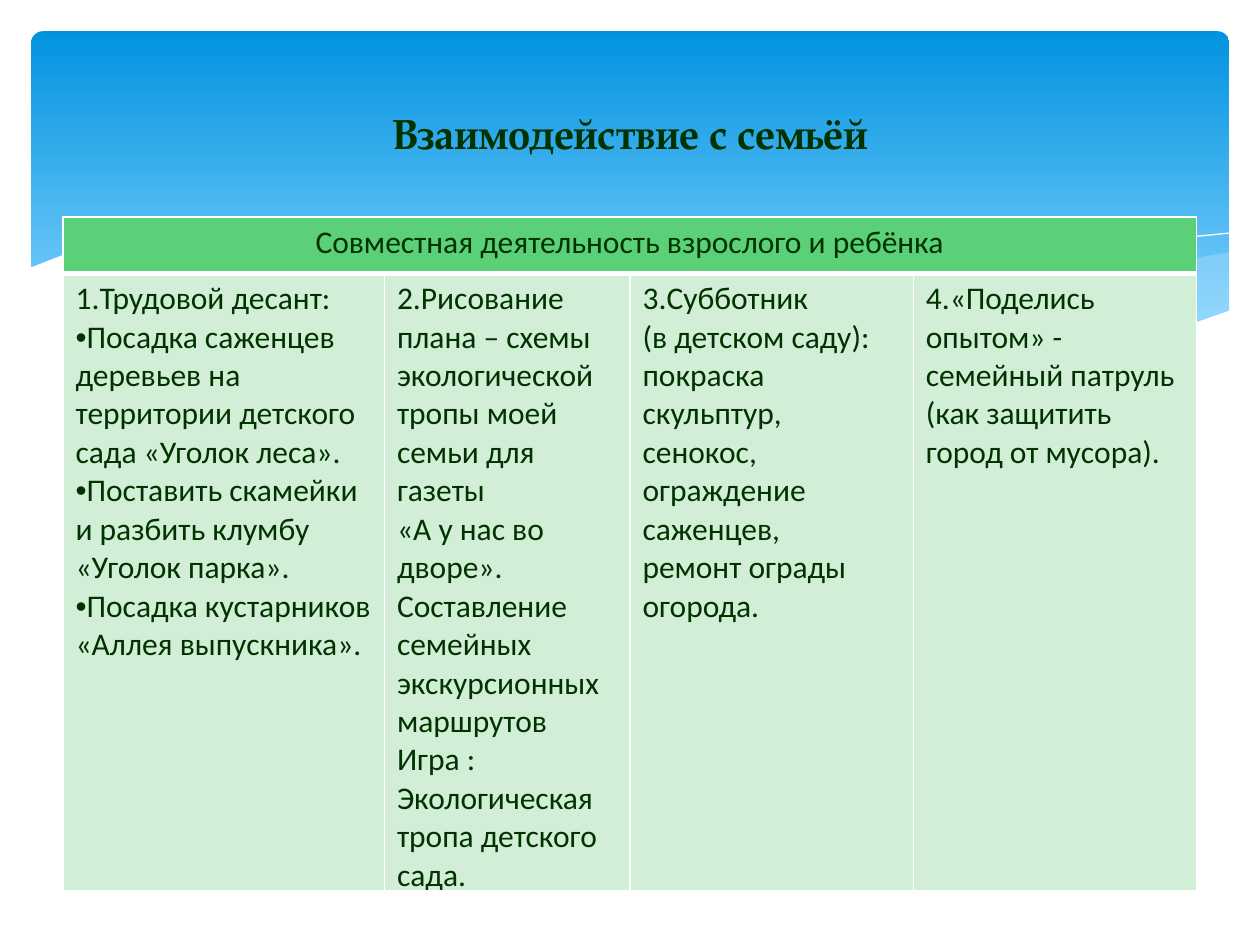
from dataclasses import dataclass

from lxml import etree
from pptx import Presentation
from pptx import util as u
from pptx.dml.color import RGBColor
from pptx.enum import shapes, text
from pptx.oxml import ns


@dataclass(frozen=True)
class Theme:
    """Colours, fonts and type sizes of the slide."""
    ink: str = "003300"
    sky: str = "0293E0"
    haze: str = "83D3FE"
    mist: str = "C6E7FC"
    white: str = "FFFFFF"
    head: str = "5BD078"
    cell: str = "D2EED6"
    serif: str = "TeX Gyre Pagella"
    sans: str = "Calibri"
    big: int = 24
    body: int = 18


LOOK = Theme()

RIGHT = [(24.79, 5.08), (23.75, 5.26), (21.87, 5.66), (19.79, 6.15), (17.93, 6.53),
         (16.79, 6.73), (17.91, 6.88), (19.23, 7.01), (20.68, 7.06), (21.92, 6.99),
         (22.99, 6.83), (23.93, 6.58), (24.79, 6.27)]
MIDDLE = [(22.68, 6.93), (21.26, 6.73), (19.69, 6.45), (17.93, 6.1), (15.98, 5.64),
          (14.45, 5.28), (13.06, 5.03), (11.81, 4.85), (10.67, 4.75), (9.17, 4.7),
          (7.95, 4.78), (7.26, 4.85), (8.69, 5.05), (10.26, 5.36), (11.4, 5.64),
          (13.46, 6.1), (15.27, 6.48), (16.89, 6.76), (18.34, 6.96), (19.94, 7.06),
          (21.29, 7.06)]
FALL = [(7.85, 4.95), (8.97, 4.8), (10.57, 4.75), (12.42, 4.83), (14.12, 5),
        (16.15, 5.28), (18.47, 5.74), (21.11, 6.38), (23.04, 6.91)]
RISE = [(15.57, 6.53), (17.65, 5.97), (19.71, 5.49), (22, 5.05), (23.47, 4.83),
        (24.77, 4.7)]
FRONT = [(24.82, 6.25), (23.88, 6.58), (22.83, 6.83), (21.59, 6.99), (20.55, 7.04),
         (18.9, 6.96), (16.97, 6.73), (14.71, 6.35), (12.78, 5.92), (11.35, 5.59),
         (9.27, 5.13), (7.42, 4.83), (5.84, 4.7), (4.5, 4.67), (3.35, 4.72),
         (2.41, 4.85), (1.5, 5.05), (0.58, 5.41), (0.58, 8.36), (24.82, 8.36)]

TITLE = "Взаимодействие с семьёй"
HEAD = "Совместная деятельность взрослого и ребёнка"
WIDTHS = [6.48, 4.95, 5.71, 5.71]
BODY = [
    ["1.Трудовой десант:",
     "•Посадка саженцев деревьев на территории детского сада «Уголок леса».",
     "•Поставить скамейки и разбить клумбу «Уголок парка».",
     "•Посадка кустарников",
     "«Аллея выпускника»."],
    ["2.Рисование",
     "плана – схемы экологической тропы моей семьи для газеты",
     "«А у нас во дворе».",
     "Составление семейных экскурсионных маршрутов",
     "Игра : Экологическая тропа детского сада."],
    ["3.Субботник",
     "(в детском саду):",
     "покраска скульптур,",
     "сенокос, ограждение саженцев,",
     "ремонт ограды огорода."],
    ["4.«Поделись опытом» - семейный патруль (как защитить город от мусора)."],
]


def rgb(code):
    """Turn a hex code into a colour."""
    return RGBColor.from_string(code)


def sub(node, tag, **atts):
    """Append a drawing element to a node."""
    return etree.SubElement(node, ns.qn(tag), **atts)


def write(frame, lines, size, font, bold=False, align=text.PP_ALIGN.LEFT):
    """Write lines as paragraphs, with a bullet where a line starts with one."""
    for i, line in enumerate(lines):
        para = frame.paragraphs[0] if i == 0 else frame.add_paragraph()
        para.alignment = align
        if line.startswith("•"):
            props = para._p.get_or_add_pPr()
            props.set("marL", "0")
            props.set("indent", "0")
            sub(props, "a:buFont", typeface="Arial")
            sub(props, "a:buChar", char="•")
        run = para.add_run()
        run.text = line.lstrip("•")
        run.font.size = u.Pt(size)
        run.font.name = font
        run.font.bold = bold
        run.font.color.rgb = rgb(LOOK.ink)


def add_sky(slide):
    """Add the rounded gradient panel."""
    box = slide.shapes.add_shape(shapes.MSO_SHAPE.ROUNDED_RECTANGLE, u.Cm(0.63),
                                 u.Cm(0.63), u.Cm(24.15), u.Cm(6.86))
    box.adjustments[0] = 0.034
    box.shadow.inherit = False
    box.line.fill.background()
    box.fill.gradient()
    box.fill.gradient_angle = 270
    stops = [(0, LOOK.sky), (0.9, LOOK.haze)]
    for stop, (place, code) in zip(box.fill.gradient_stops, stops):
        stop.position = place
        stop.color.rgb = rgb(code)


def trace(slide, points, close):
    """Build a freeform through points given in centimetres."""
    spots = [(u.Cm(x), u.Cm(y)) for x, y in points]
    pen = slide.shapes.build_freeform(*spots[0])
    pen.add_line_segments(spots[1:], close=close)
    form = pen.convert_to_shape()
    form.shadow.inherit = False
    return form


def add_wave(slide, points, code, alpha=100):
    """Add a filled wave."""
    form = trace(slide, points, True)
    form.line.fill.background()
    form.fill.solid()
    form.fill.fore_color.rgb = rgb(code)
    if alpha < 100:
        tone = form._element.spPr.find(".//" + ns.qn("a:srgbClr"))
        sub(tone, "a:alpha", val=str(alpha * 1000))


def add_curve(slide, points):
    """Add a thin open curve."""
    form = trace(slide, points, False)
    form.fill.background()
    form.line.color.rgb = rgb(LOOK.white)
    form.line.width = u.Pt(0)


def add_title(slide):
    """Add the centred title."""
    box = slide.shapes.add_textbox(u.Cm(1.27), u.Cm(0.94), u.Cm(22.86), u.Cm(3.48))
    frame = box.text_frame
    frame.word_wrap = True
    frame.vertical_anchor = text.MSO_ANCHOR.MIDDLE
    write(frame, [TITLE], LOOK.big, LOOK.serif, True, text.PP_ALIGN.CENTER)


def dress(cell, code, top, base):
    """Fill a cell and give it white borders."""
    cell.fill.solid()
    cell.fill.fore_color.rgb = rgb(code)
    props = cell._tc.get_or_add_tcPr()
    for i, (side, width) in enumerate(zip("LRTB", (1, 1, top, base))):
        line = etree.Element(ns.qn("a:ln" + side), w=str(u.Pt(width)))
        sub(sub(line, "a:solidFill"), "a:srgbClr", val=LOOK.white)
        props.insert(i, line)


def add_grid(slide):
    """Add the table with one merged heading."""
    grid = slide.shapes.add_table(2, len(WIDTHS), u.Cm(1.27), u.Cm(4.37),
                                  u.Cm(22.86), u.Cm(13.59)).table
    grid.first_row = grid.horz_banding = False
    for col, width in zip(grid.columns, WIDTHS):
        col.width = u.Cm(width)
    for row, height in zip(grid.rows, (1.14, 12.45)):
        row.height = u.Cm(height)
    for i, lines in enumerate(BODY):
        dress(grid.cell(0, i), LOOK.head, 1, 3)
        dress(grid.cell(1, i), LOOK.cell, 3, 1)
        write(grid.cell(1, i).text_frame, lines, LOOK.body, LOOK.sans)
    head = grid.cell(0, 0)
    head.merge(grid.cell(0, len(WIDTHS) - 1))
    write(head.text_frame, [HEAD], LOOK.body, LOOK.sans, align=text.PP_ALIGN.CENTER)


def main():
    """Build the slide and save it."""
    deck = Presentation()
    deck.slide_width, deck.slide_height = u.Cm(25.4), u.Cm(19.05)
    slide = deck.slides.add_slide(deck.slide_layouts[6])
    add_sky(slide)
    add_wave(slide, RIGHT, LOOK.mist, 29)
    add_wave(slide, MIDDLE, LOOK.mist, 40)
    add_curve(slide, FALL)
    add_curve(slide, RISE)
    add_wave(slide, FRONT, LOOK.white)
    add_title(slide)
    add_grid(slide)
    deck.save("out.pptx")


if __name__ == "__main__":
    main()
